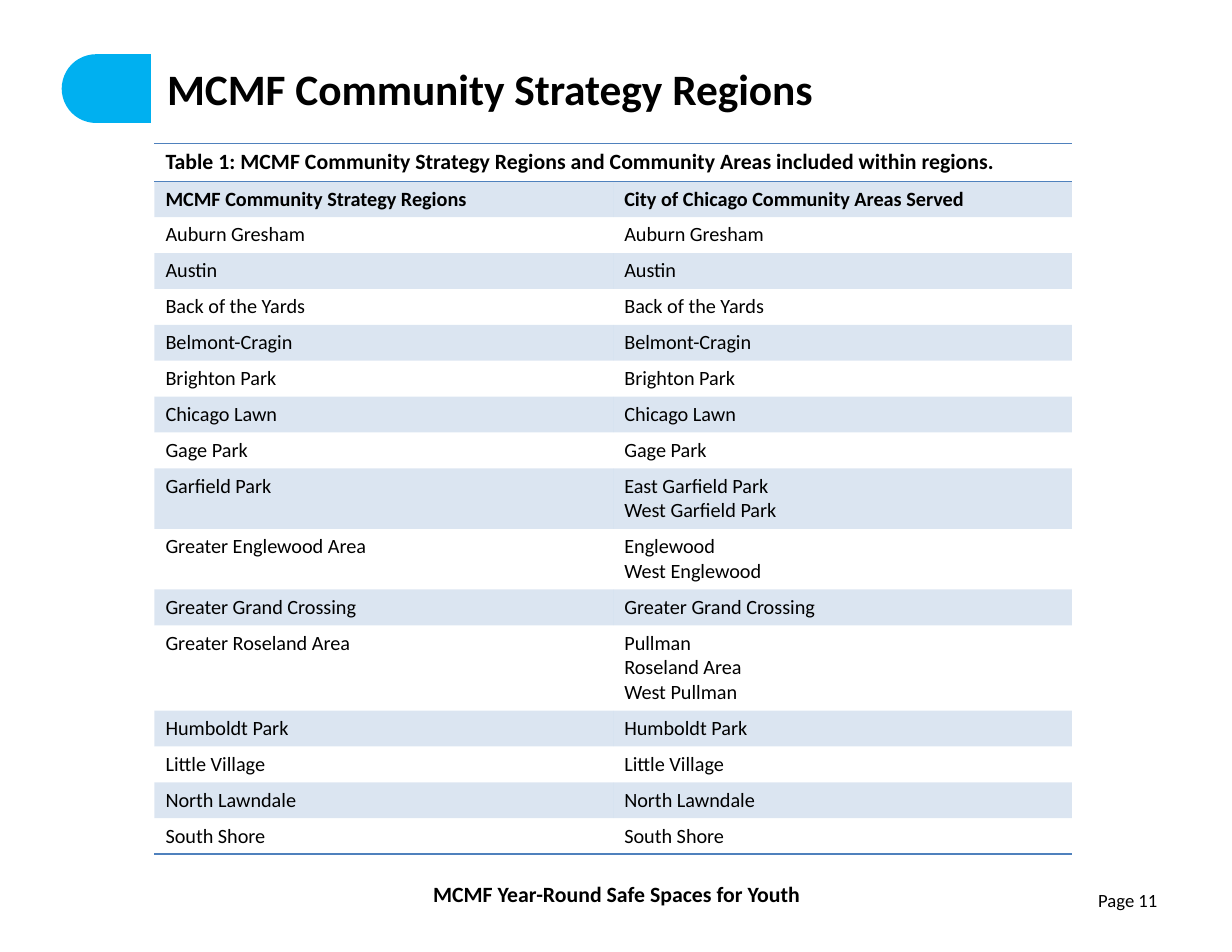
from lxml import etree
from pptx import Presentation
from pptx.dml.color import RGBColor
from pptx.enum.shapes import MSO_SHAPE
from pptx.enum.text import MSO_ANCHOR, MSO_AUTO_SIZE, PP_ALIGN
from pptx.oxml.ns import qn
from pptx.util import Cm, Pt

ROUNDED, RECTANGLE = MSO_SHAPE.ROUNDED_RECTANGLE, MSO_SHAPE.RECTANGLE
LEFT, CENTER, RIGHT = PP_ALIGN.LEFT, PP_ALIGN.CENTER, PP_ALIGN.RIGHT
MIDDLE = MSO_ANCHOR.MIDDLE
NO_AUTOFIT = MSO_AUTO_SIZE.NONE

# Content
TITLE = "MCMF Community Strategy Regions"
FOOTER = "MCMF Year-Round Safe Spaces for Youth"
PAGE_LABEL = "Page 11"
CAPTION = ("Table 1: MCMF Community Strategy Regions and Community Areas "
           "included within regions.")
HEADINGS = ("MCMF Community Strategy Regions",
            "City of Chicago Community Areas Served")
REGIONS = [  # a region without listed areas serves the area of the same name
    ("Auburn Gresham", []),
    ("Austin", []),
    ("Back of the Yards", []),
    ("Belmont-Cragin", []),
    ("Brighton Park", []),
    ("Chicago Lawn", []),
    ("Gage Park", []),
    ("Garfield Park", ["East Garfield Park", "West Garfield Park"]),
    ("Greater Englewood Area", ["Englewood", "West Englewood"]),
    ("Greater Grand Crossing", []),
    ("Greater Roseland Area", ["Pullman", "Roseland Area", "West Pullman"]),
    ("Humboldt Park", []),
    ("Little Village", []),
    ("North Lawndale", []),
    ("South Shore", []),
]

# Look
FONT = "Calibri"
BLACK, WHITE, SKY, BLUE = "000000", "FFFFFF", "00B0F0", "4F81BD"
BAND_OPACITY = 20
NO_STYLE = "{2D5ABB26-0587-4C30-8999-92F81FD0307C}"
TABLE_LEFT, TABLE_TOP, TABLE_WIDTH = 3.5, 3.25, 20.81
CAPTION_HEIGHT, ROW_PADDING, LINE_HEIGHT = 0.86, 0.25, 0.56


def color(hex_code):
    return RGBColor.from_string(hex_code)


def write(frame, text, size, bold=False, align=LEFT):
    frame.text = text
    for paragraph in frame.paragraphs:
        paragraph.alignment = align
        for span in paragraph.runs:
            span.font.name = FONT
            span.font.size = Pt(size)
            span.font.bold = bold
            span.font.color.rgb = color(BLACK)


def add_block(page, kind, left, top, width, height, fill, position):
    block = page.shapes.add_shape(kind, Cm(left), Cm(top), Cm(width), Cm(height))
    block.shadow.inherit = False
    block.fill.solid()
    block.fill.fore_color.rgb = color(fill)
    block.line.fill.background()
    # Keep the decoration behind the title
    page.shapes.element.insert(position, block.element)
    return block


def add_label(page, left, top, width, height, text, size, bold, align):
    box = page.shapes.add_textbox(Cm(left), Cm(top), Cm(width), Cm(height))
    box.text_frame.word_wrap = True
    write(box.text_frame, text, size, bold, align)
    return box


def add_borders(cell, *sides):
    properties = cell._tc.get_or_add_tcPr()
    for position, side in enumerate(sides):
        line = etree.Element(qn("a:" + side), w=str(Pt(1)))
        solid = etree.SubElement(line, qn("a:solidFill"))
        etree.SubElement(solid, qn("a:srgbClr"), val=BLUE)
        properties.insert(position, line)


def shade(cell):
    cell.fill.solid()
    cell.fill.fore_color.rgb = color(BLUE)
    tint = cell._tc.tcPr.find(".//" + qn("a:srgbClr"))
    etree.SubElement(tint, qn("a:alpha"), val=str(BAND_OPACITY * 1000))


def add_region_table(page):
    rows = [HEADINGS] + [(name, "\n".join(areas or [name]))
                         for name, areas in REGIONS]
    heights = [CAPTION_HEIGHT] + [
        ROW_PADDING + LINE_HEIGHT * len(areas.split("\n")) for _, areas in rows]
    table = page.shapes.add_table(
        len(heights), 2, Cm(TABLE_LEFT), Cm(TABLE_TOP),
        Cm(TABLE_WIDTH), Cm(sum(heights))).table
    table._tbl.tblPr.find(qn("a:tableStyleId")).text = NO_STYLE
    table.first_row = table.horz_banding = False
    for row, height in zip(table.rows, heights):
        row.height = Cm(height)

    # Caption across both columns
    table.cell(0, 0).merge(table.cell(0, 1))
    write(table.cell(0, 0).text_frame, CAPTION, 14, bold=True)

    # Headings and regions, every other row shaded
    for index, texts in enumerate(rows, start=1):
        for column, text in enumerate(texts):
            cell = table.cell(index, column)
            write(cell.text_frame, text, 13, bold=index == 1)
            if index % 2:
                shade(cell)
            else:
                cell.fill.background()

    # Rules around the caption and under the last row
    for column in range(2):
        table.cell(0, column).fill.background()
        add_borders(table.cell(0, column), "lnT", "lnB")
        add_borders(table.cell(len(rows), column), "lnB")


def main():
    deck = Presentation()
    deck.slide_width, deck.slide_height = Cm(27.94), Cm(21.59)
    page = deck.slides.add_slide(deck.slide_layouts[5])

    # Title with its rounded tab
    title = page.shapes.title
    title.left, title.top, title.width, title.height = (
        Cm(3.5), Cm(1.3), Cm(26.54 - 3.5), Cm(1.4))
    title.text_frame.auto_size = NO_AUTOFIT
    title.text_frame.vertical_anchor = MIDDLE
    title.text_frame.margin_left = Cm(0.29)
    write(title.text_frame, TITLE, 27.9, bold=True)
    tab = add_block(page, ROUNDED, 1.4, 1.23, 21.44, 1.56, SKY, 2)
    tab.adjustments[0] = 0.5
    panel = add_block(page, RECTANGLE, 3.46, 1.04, 19.48, 2.18, WHITE, 3)
    panel.line.color.rgb = color(WHITE)
    panel.line.width = Pt(2)

    add_region_table(page)

    # Footer
    add_label(page, 6.76, 19.84, 14.45, 0.86, FOOTER, 14, True, CENTER)
    number = add_label(page, 20.02, 20.02, 6.52, 1.14, PAGE_LABEL, 12, False, RIGHT)
    number.text_frame.margin_right = Cm(0.29)
    number.text_frame.margin_top = Cm(0.15)

    deck.save("out.pptx")


if __name__ == "__main__":
    main()
